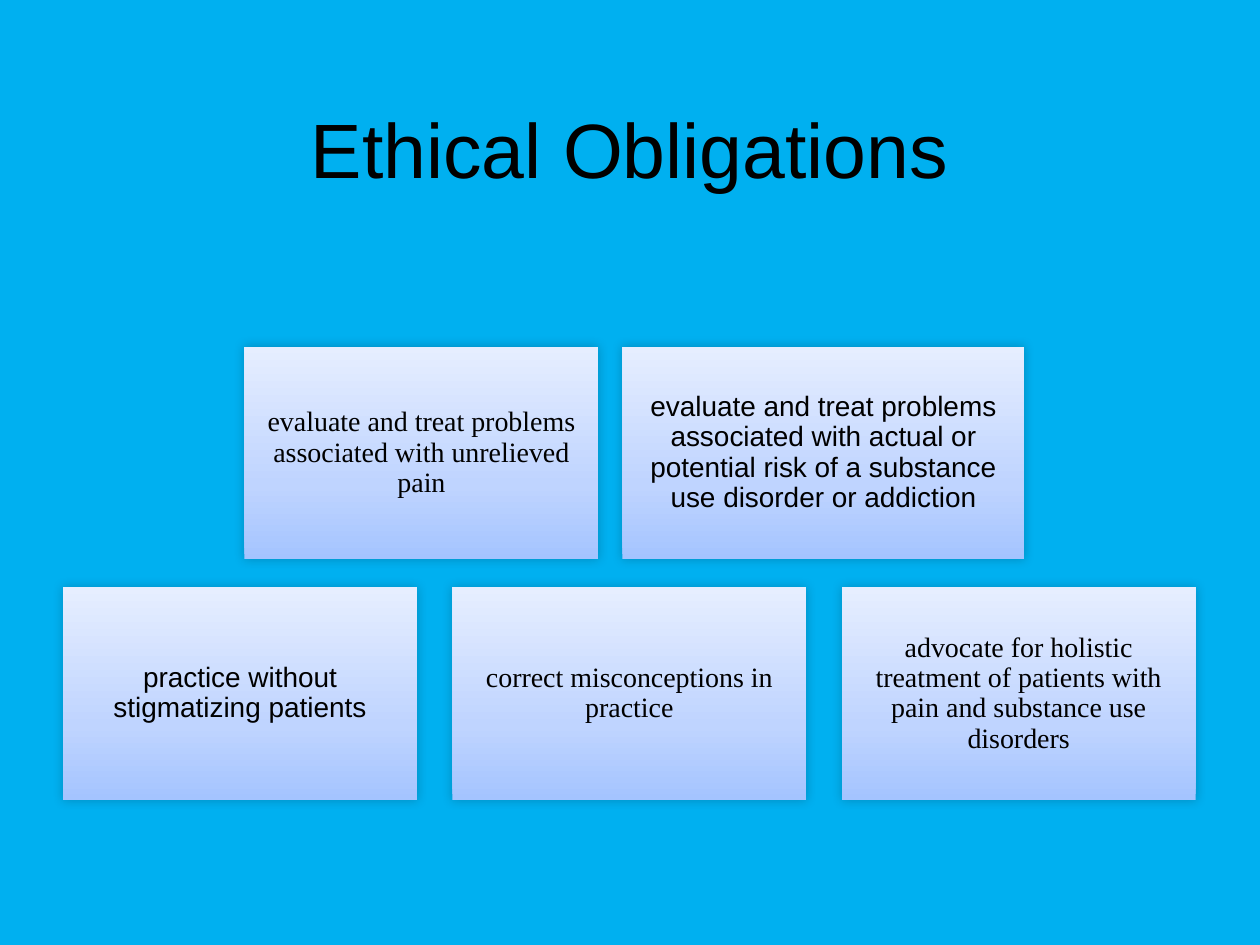
from copy import deepcopy

from lxml.etree import SubElement
from pptx import Presentation
from pptx.dml.color import RGBColor
from pptx.enum.shapes import MSO_SHAPE
from pptx.enum.text import MSO_ANCHOR, PP_ALIGN
from pptx.oxml.ns import qn
from pptx.util import Inches, Pt

BLACK = RGBColor(0x00, 0x00, 0x00)
SKY = RGBColor(0x00, 0xB0, 0xF0)
STOPS = [
    (0, RGBColor(0xA4, 0xC4, 0xFF)),
    (0.35, RGBColor(0xBF, 0xD4, 0xFF)),
    (1, RGBColor(0xE6, 0xEE, 0xFF)),
]
SANS, SERIF = "Arial", "Times New Roman"

TITLE = "Ethical Obligations"
WIDE, NORMAL = 3.19, 2.81
ROWS = [
    {"left": 1.94, "gap": 0.19, "boxes": [
        ("evaluate and treat problems associated with unrelieved pain", SERIF, NORMAL),
        ("evaluate and treat problems associated with actual or potential risk "
         "of a substance use disorder or addiction", SANS, WIDE),
    ]},
    {"left": 0.5, "gap": 0.28, "boxes": [
        ("practice without stigmatizing patients", SANS, NORMAL),
        ("correct misconceptions in practice", SERIF, NORMAL),
        ("advocate for holistic treatment of patients with pain and "
         "substance use disorders", SERIF, NORMAL),
    ]},
]
TOP, HEIGHT, ROW_STEP = 2.75, 1.69, 1.91


def write(tf, text, font, size, spacing=1.0, inset=0.1):
    tf.word_wrap = True
    tf.vertical_anchor = MSO_ANCHOR.MIDDLE
    tf.margin_left = tf.margin_right = Inches(inset)
    tf.margin_top = tf.margin_bottom = Inches(min(inset, 0.07))
    p = tf.paragraphs[0]
    p.alignment = PP_ALIGN.CENTER
    p.line_spacing = spacing
    r = p.add_run()
    r.text = text
    r.font.name, r.font.size = font, Pt(size)
    r.font.color.rgb = BLACK


def shade(s):
    s.fill.gradient()
    s.fill.gradient_angle = 90
    stops = s._element.spPr.find(".//" + qn("a:gsLst"))
    stops.append(deepcopy(stops[0]))
    for stop, (position, color) in zip(s.fill.gradient_stops, STOPS):
        stop.position = position
        stop.color.rgb = color
    s.line.fill.background()


def add_shadow(s):
    s.shadow.inherit = False
    effects = s._element.spPr.find(qn("a:effectLst"))
    shadow = SubElement(effects, qn("a:outerShdw"), blurRad=str(Pt(6)),
                        dist="0", dir=str(315 * 60000), rotWithShape="0")
    color = SubElement(shadow, qn("a:srgbClr"), val=str(BLACK))
    SubElement(color, qn("a:alpha"), val="20000")


def main():
    prs = Presentation()
    prs.slide_width, prs.slide_height = Inches(10), Inches(7.5)
    slide = prs.slides.add_slide(prs.slide_layouts[5])
    slide.background.fill.solid()
    slide.background.fill.fore_color.rgb = SKY

    title = slide.shapes.title
    title.left, title.top = Inches(0.5), Inches(0.33)
    title.width, title.height = Inches(9), Inches(1.69)
    write(title.text_frame, TITLE, SANS, 44)

    for i, row in enumerate(ROWS):
        left = row["left"]
        for text, font, width in row["boxes"]:
            s = slide.shapes.add_shape(
                MSO_SHAPE.RECTANGLE, Inches(left), Inches(TOP + i * ROW_STEP),
                Inches(width), Inches(HEIGHT))
            shade(s)
            add_shadow(s)
            write(s.text_frame, text, font, 16, spacing=0.9, inset=0.07)
            left += width + row["gap"]

    prs.save("out.pptx")


if __name__ == "__main__":
    main()
